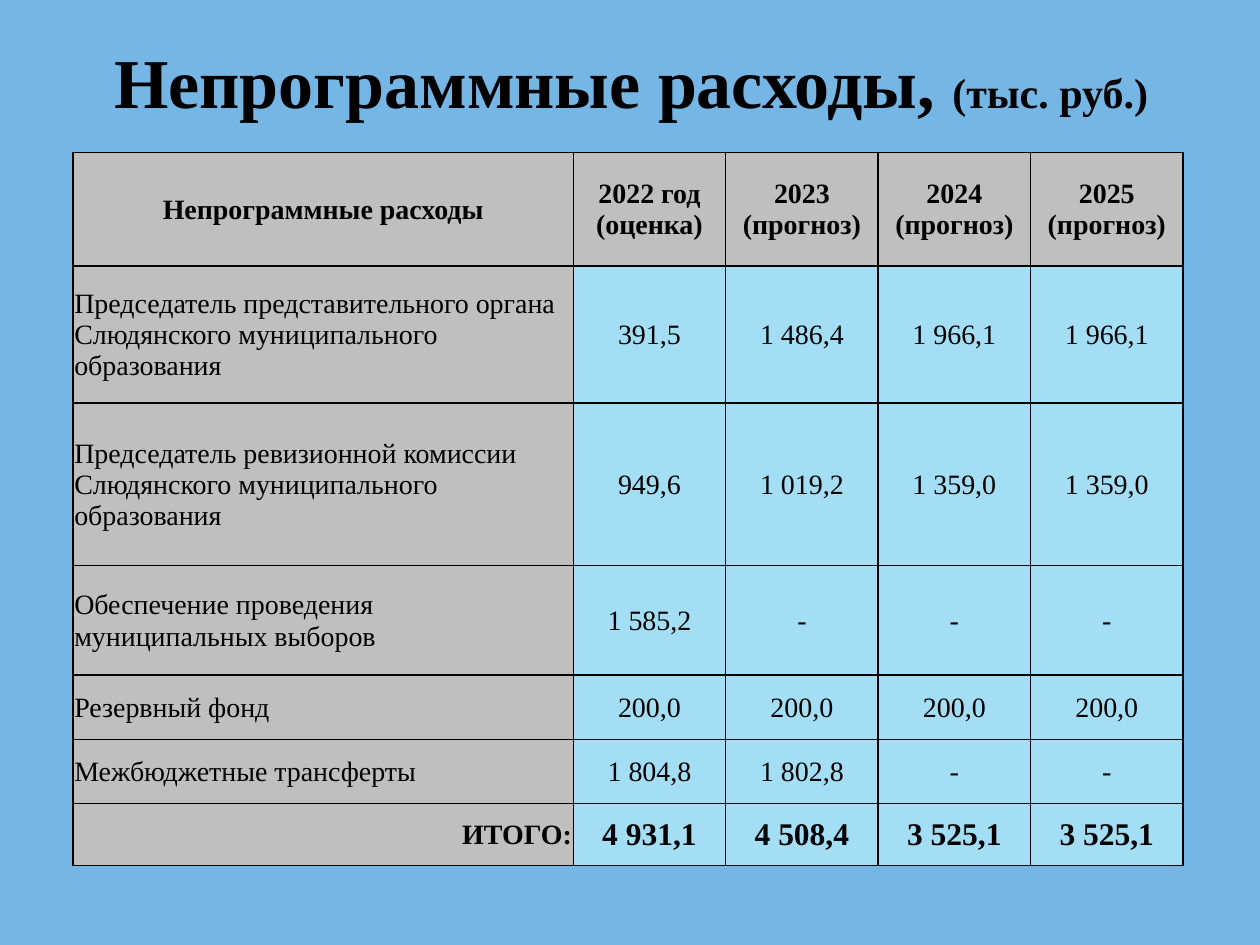
from dataclasses import dataclass

from lxml.etree import SubElement
from pptx import Presentation
from pptx.dml.color import RGBColor
from pptx.enum.text import MSO_ANCHOR, PP_ALIGN
from pptx.oxml.ns import qn
from pptx.util import Inches, Pt


@dataclass(frozen=True)
class Theme:
    font: str = "Times New Roman"
    background: str = "75B6E5"
    text: str = "000000"
    border: str = "000000"
    label_fill: str = "BFBFBF"
    value_fill: str = "A4DEF4"
    title_size: int = 40
    unit_size: int = 24
    body_size: int = 16
    total_size: int = 18


theme = Theme()


def add_run(p, text, size, bold):
    r = p.add_run()
    r.text = text
    r.font.name = theme.font
    r.font.size = Pt(size)
    r.font.bold = bold
    r.font.color.rgb = RGBColor.from_string(theme.text)


def add_borders(cell):
    tc_pr = cell._tc.get_or_add_tcPr()
    for side in ("lnL", "lnR", "lnT", "lnB"):
        line = SubElement(tc_pr, qn(f"a:{side}"), w=str(Pt(1)))
        fill = SubElement(line, qn("a:solidFill"))
        SubElement(fill, qn("a:srgbClr"), val=theme.border)


# Slide and background
prs = Presentation()
prs.slide_width, prs.slide_height = Inches(10), Inches(7.5)
s = prs.slides.add_slide(prs.slide_layouts.get_by_name("Title Only"))
s.background.fill.solid()
s.background.fill.fore_color.rgb = RGBColor.from_string(theme.background)

# Title
title = s.shapes.title
title.left, title.top = Inches(0.51), Inches(0.21)
title.width, title.height = Inches(9), Inches(0.94)
tf = title.text_frame
tf.word_wrap = True
tf.vertical_anchor = MSO_ANCHOR.MIDDLE
p = tf.paragraphs[0]
p.alignment = PP_ALIGN.CENTER
p.line_spacing = 0.9
add_run(p, "Непрограммные расходы, ", theme.title_size, True)
add_run(p, "(тыс. руб.)", theme.unit_size, True)

# Expense table: header first, total last
rows = [
    ("Непрограммные расходы", "2022 год (оценка)", "2023 (прогноз)",
     "2024 (прогноз)", "2025 (прогноз)"),
    ("Председатель представительного органа Слюдянского муниципального образования",
     "391,5", "1 486,4", "1 966,1", "1 966,1"),
    ("Председатель ревизионной комиссии Слюдянского муниципального образования",
     "949,6", "1 019,2", "1 359,0", "1 359,0"),
    ("Обеспечение проведения муниципальных выборов", "1 585,2", "-", "-", "-"),
    ("Резервный фонд", "200,0", "200,0", "200,0", "200,0"),
    ("Межбюджетные трансферты", "1 804,8", "1 802,8", "-", "-"),
    ("ИТОГО:", "4 931,1", "4 508,4", "3 525,1", "3 525,1"),
]
col_widths = [3.97] + [1.21] * 4
row_heights = [0.9, 1.09, 1.29, 0.87, 0.51, 0.51, 0.49]
header, total = 0, len(rows) - 1

table = s.shapes.add_table(
    len(rows), len(col_widths), Inches(0.58), Inches(1.21),
    Inches(sum(col_widths)), Inches(sum(row_heights))).table
table.first_row = False
table.horz_banding = False
for column, width in zip(table.columns, col_widths):
    column.width = Inches(width)
for row, height in zip(table.rows, row_heights):
    row.height = Inches(height)

for i, row in enumerate(rows):
    for j, text in enumerate(row):
        cell = table.cell(i, j)
        cell.margin_left = cell.margin_right = cell.margin_top = Inches(0.01)
        cell.margin_bottom = Inches(0)
        cell.vertical_anchor = MSO_ANCHOR.MIDDLE
        add_borders(cell)
        is_label = i == header or j == 0
        cell.fill.solid()
        cell.fill.fore_color.rgb = RGBColor.from_string(
            theme.label_fill if is_label else theme.value_fill)

        p = cell.text_frame.paragraphs[0]
        if i == header or j > 0:
            p.alignment = PP_ALIGN.CENTER
        else:
            p.alignment = PP_ALIGN.RIGHT if i == total else PP_ALIGN.LEFT
        size = theme.total_size if i == total and j > 0 else theme.body_size
        add_run(p, text, size, i in (header, total))

prs.save("out.pptx")
